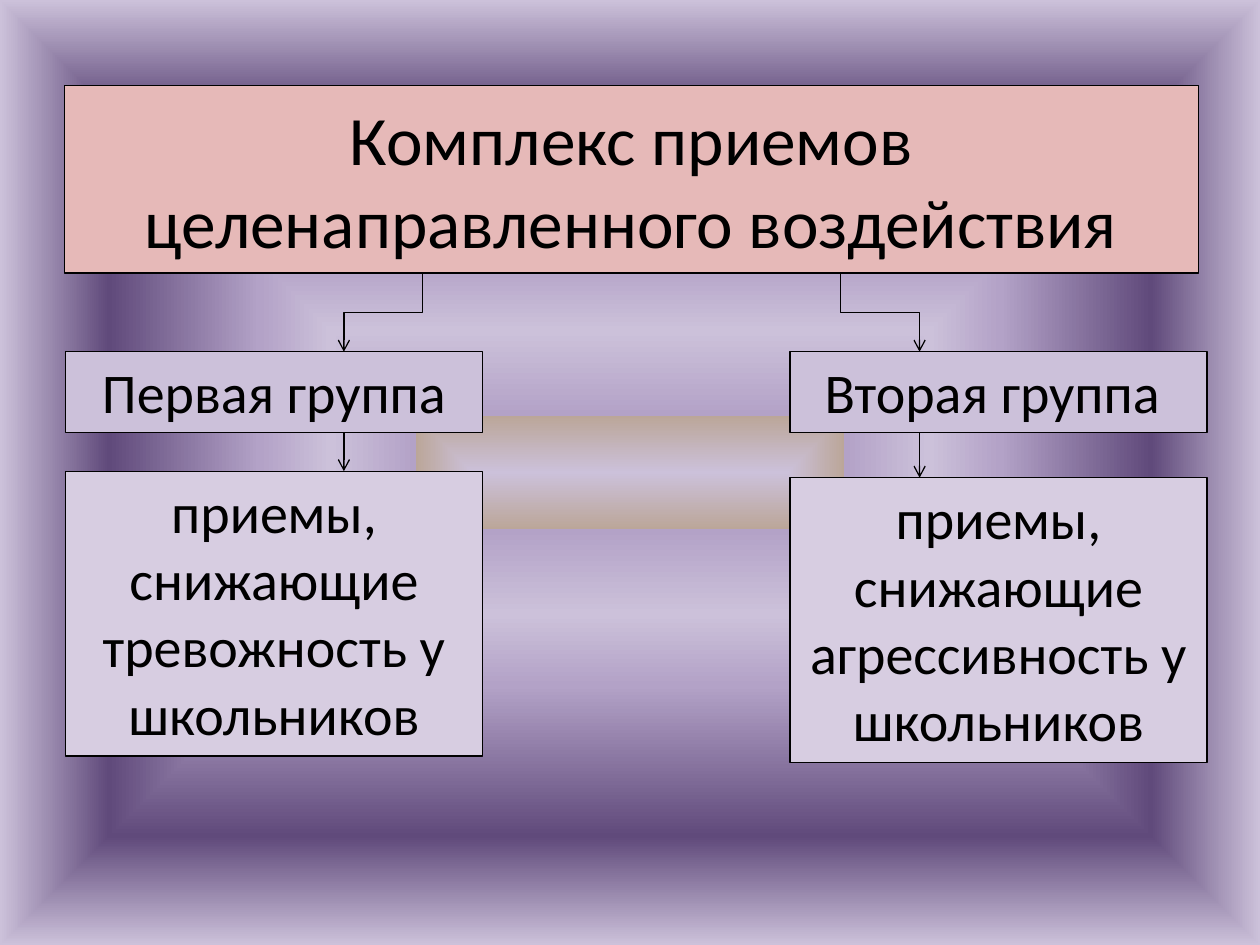
"""Builds a slide on two groups of techniques, drawn as a small tree."""
from lxml import etree
from pptx import Presentation
from pptx import util as u
from pptx.dml.color import RGBColor
from pptx.enum import shapes, text
from pptx.oxml.ns import qn

THEME = {
    "font": "Calibri", "ink": "000000", "line": 0.75,
    "title": ("E6B9B8", 39.6), "group": ("CCC1DA", 32), "body": ("D7CDE1", 32),
    "back": [(0, "CCC1DA"), (12, "BBA699"), (12, "B3A2C7"), (30, "CCC1DA"),
             (45, "B3A2C7"), (77, "604A7B"), (100, "CCC1DA")],
}
INK = RGBColor.from_string(THEME["ink"])


def add_box(slide, role, words, area, fit):
    fill, size = THEME[role]
    box = slide.shapes.add_shape(shapes.MSO_SHAPE.RECTANGLE, *map(u.Pt, area))
    box.shadow.inherit = False
    box.fill.solid()
    box.fill.fore_color.rgb = RGBColor.from_string(fill)
    box.line.color.rgb = INK
    box.line.width = u.Pt(THEME["line"])
    frame = box.text_frame
    frame.text = words
    par = frame.paragraphs[0]
    par.alignment = text.PP_ALIGN.CENTER
    par.font.color.rgb = INK
    for name, value in {"name": THEME["font"], "size": u.Pt(size)}.items():
        setattr(par.font, name, value)
    form = {"word_wrap": True, "auto_size": fit,
            "vertical_anchor": text.MSO_ANCHOR.MIDDLE if role == "title" else text.MSO_ANCHOR.TOP}
    for name, value in form.items():
        setattr(frame, name, value)


def add_arrow(slide, kind, ends, turn=0):
    arrow = slide.shapes.add_connector(kind, *map(u.Pt, ends))
    arrow.line.color.rgb = INK
    arrow.line.width = u.Pt(THEME["line"])
    props = arrow._element.spPr
    etree.SubElement(arrow.line._get_or_add_ln(), qn("a:tailEnd"), type="arrow")
    etree.SubElement(props, qn("a:effectLst"))
    if turn:
        props.find(qn("a:xfrm")).set("rot", str(turn * 60000))


deck = Presentation()
deck.slide_width, deck.slide_height = u.Pt(720), u.Pt(540)
slide = deck.slides.add_slide(deck.slide_layouts[6])

slide.background.fill.gradient()
grad = next(slide._element.iter(qn("a:gradFill")))
for child in list(grad):
    grad.remove(child)
stops = etree.SubElement(grad, qn("a:gsLst"))
for pos, color in THEME["back"]:
    stop = etree.SubElement(stops, qn("a:gs"), pos=str(pos * 1000))
    etree.SubElement(stop, qn("a:srgbClr"), val=color)
shade = etree.SubElement(grad, qn("a:path"), path="rect")
etree.SubElement(shade, qn("a:fillToRect"), dict.fromkeys("ltrb", "50000"))

GROW, FIXED = text.MSO_AUTO_SIZE.SHAPE_TO_FIT_TEXT, text.MSO_AUTO_SIZE.NONE
LINE, BENT = shapes.MSO_CONNECTOR.STRAIGHT, shapes.MSO_CONNECTOR.ELBOW
WIDE, BASE, TOP, LOW, STEP = 238.25, 156, 201, 247, 45

add_box(slide, "title", "Комплекс приемов целенаправленного воздействия",
        (36.75, 48.75, 648, 107.25), FIXED)

groups = [
    ("Первая группа", "приемы, снижающие тревожность у школьников",
     37.5, 196.5, 269.25, 1, 90),
    ("Вторая группа ", "приемы, снижающие агрессивность у школьников",
     451.5, 525.5, 273, -1, 270),
]
for name, words, left, mid, top, side, turn in groups:
    add_box(slide, "group", name, (left, TOP, WIDE, LOW - TOP), GROW)
    add_box(slide, "body", words, (left, top, WIDE, 162.75), GROW)
    add_arrow(slide, BENT, (mid, BASE, mid + side * STEP, TOP), turn)
    add_arrow(slide, LINE, (mid, LOW, mid, top))

deck.save("out.pptx")
